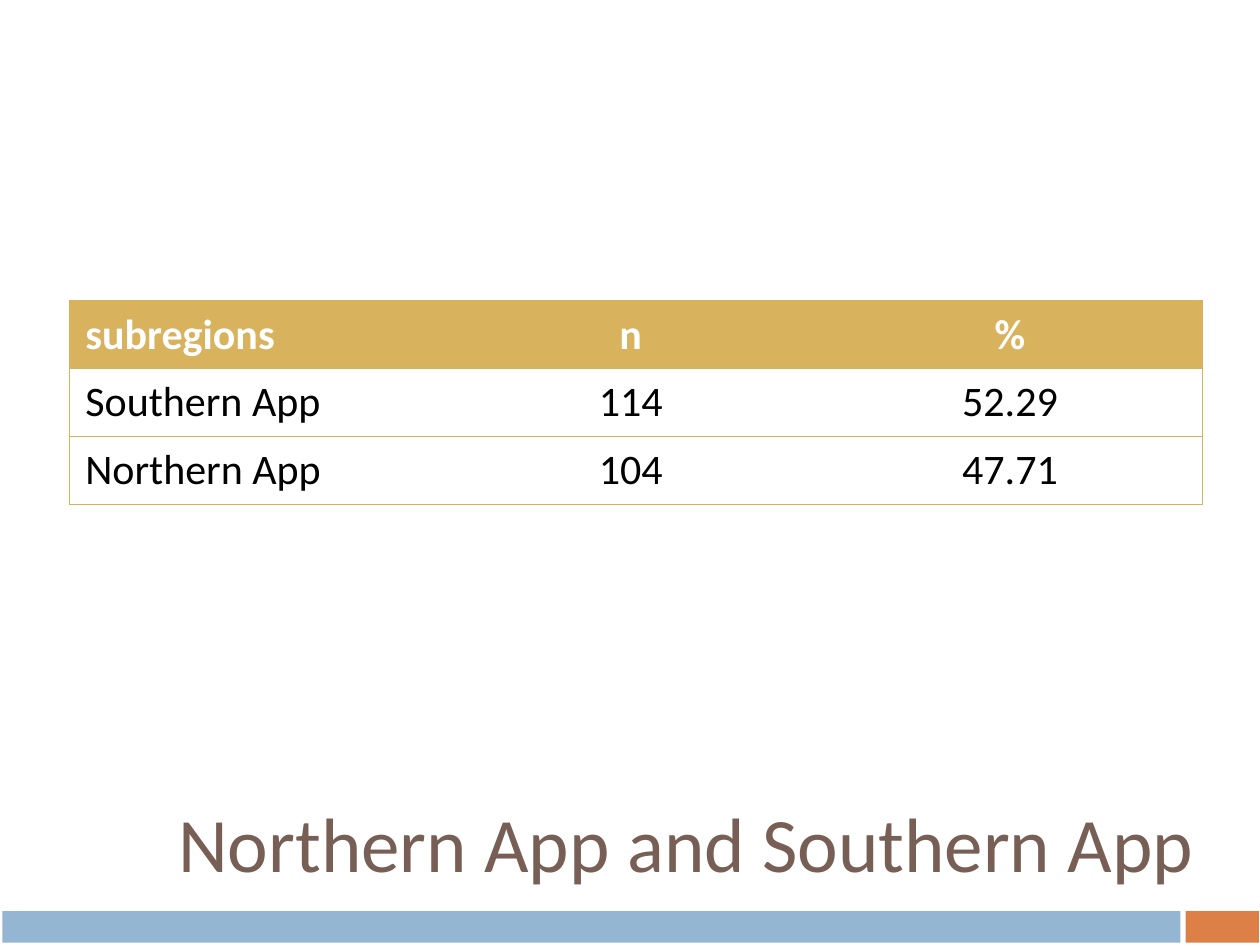
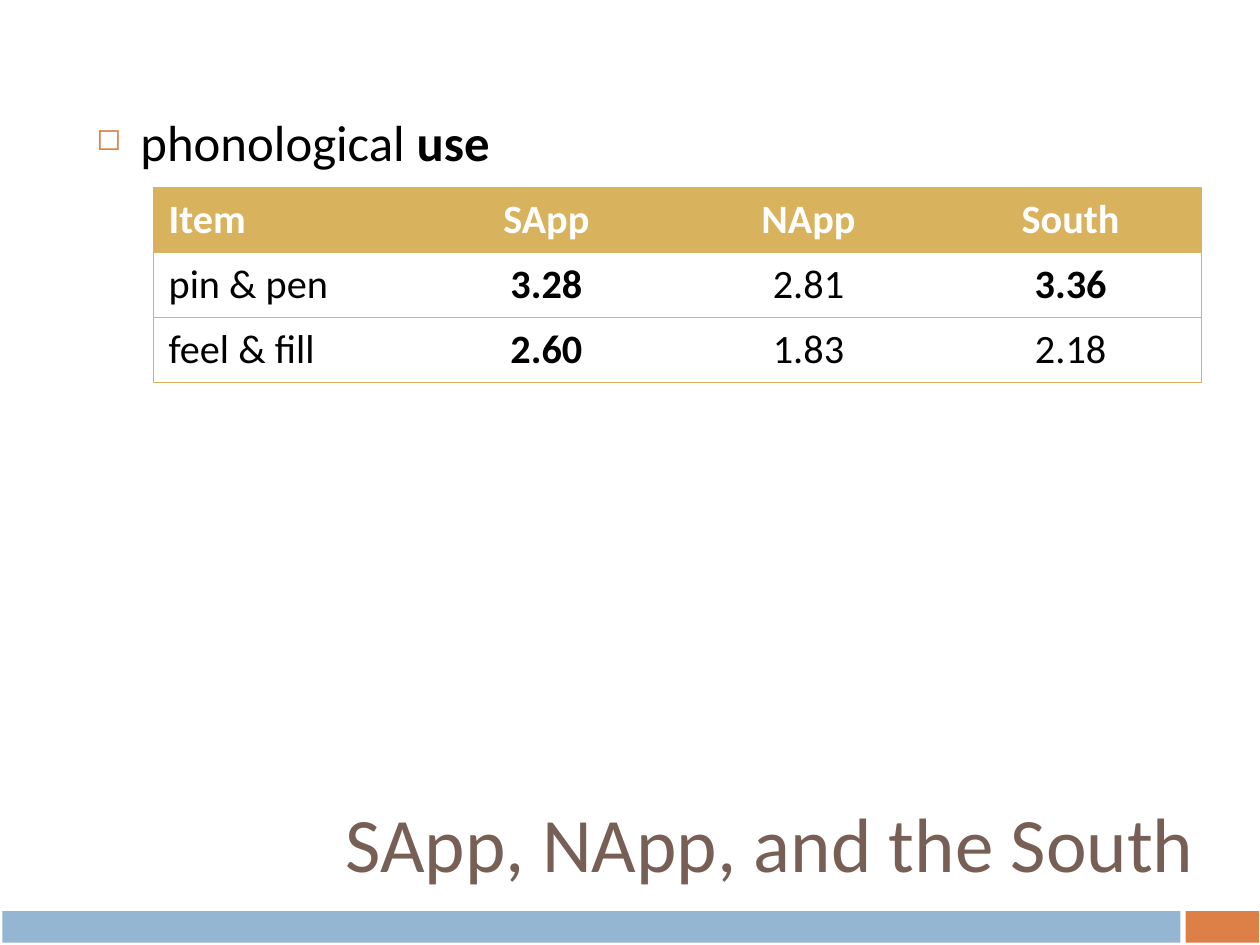
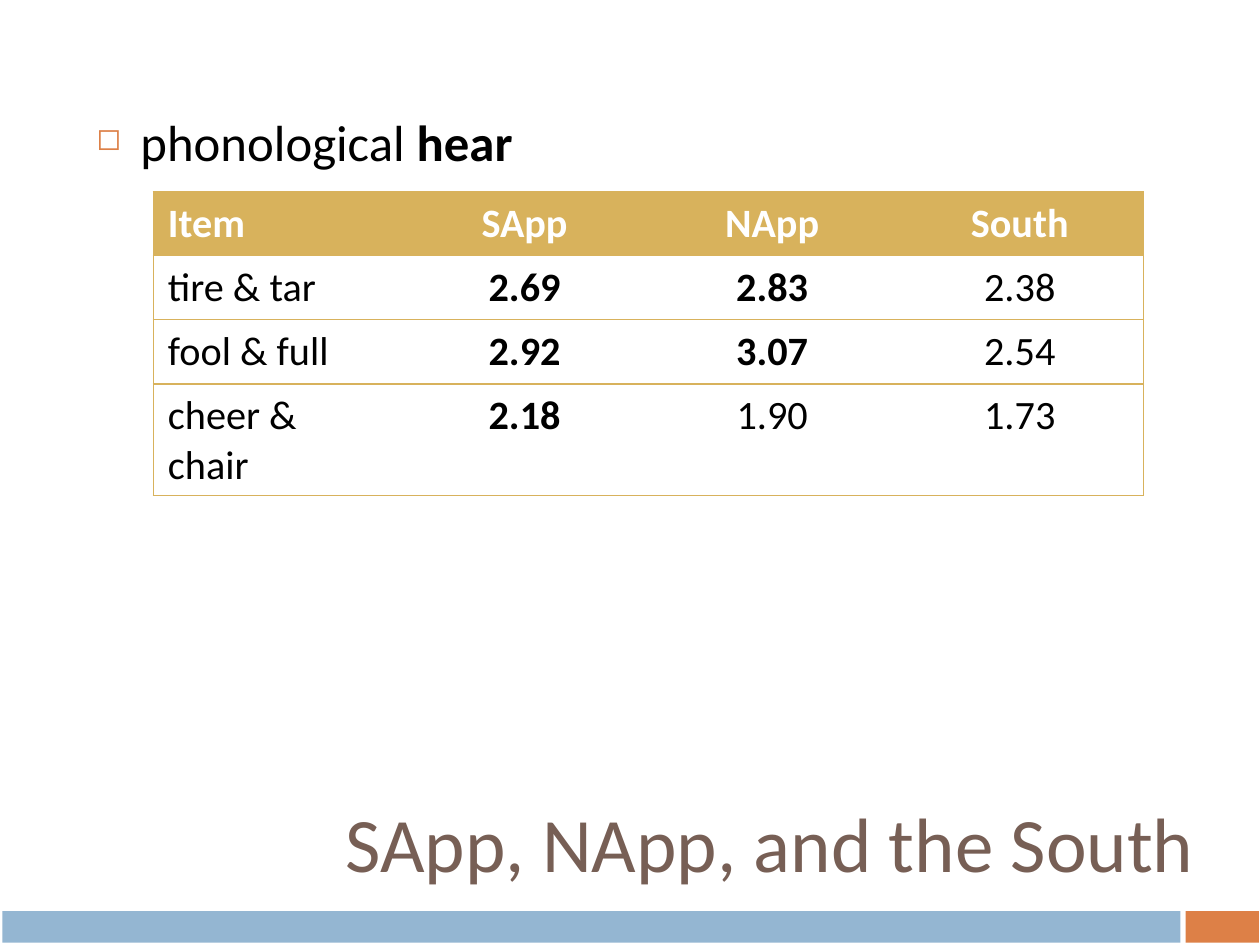
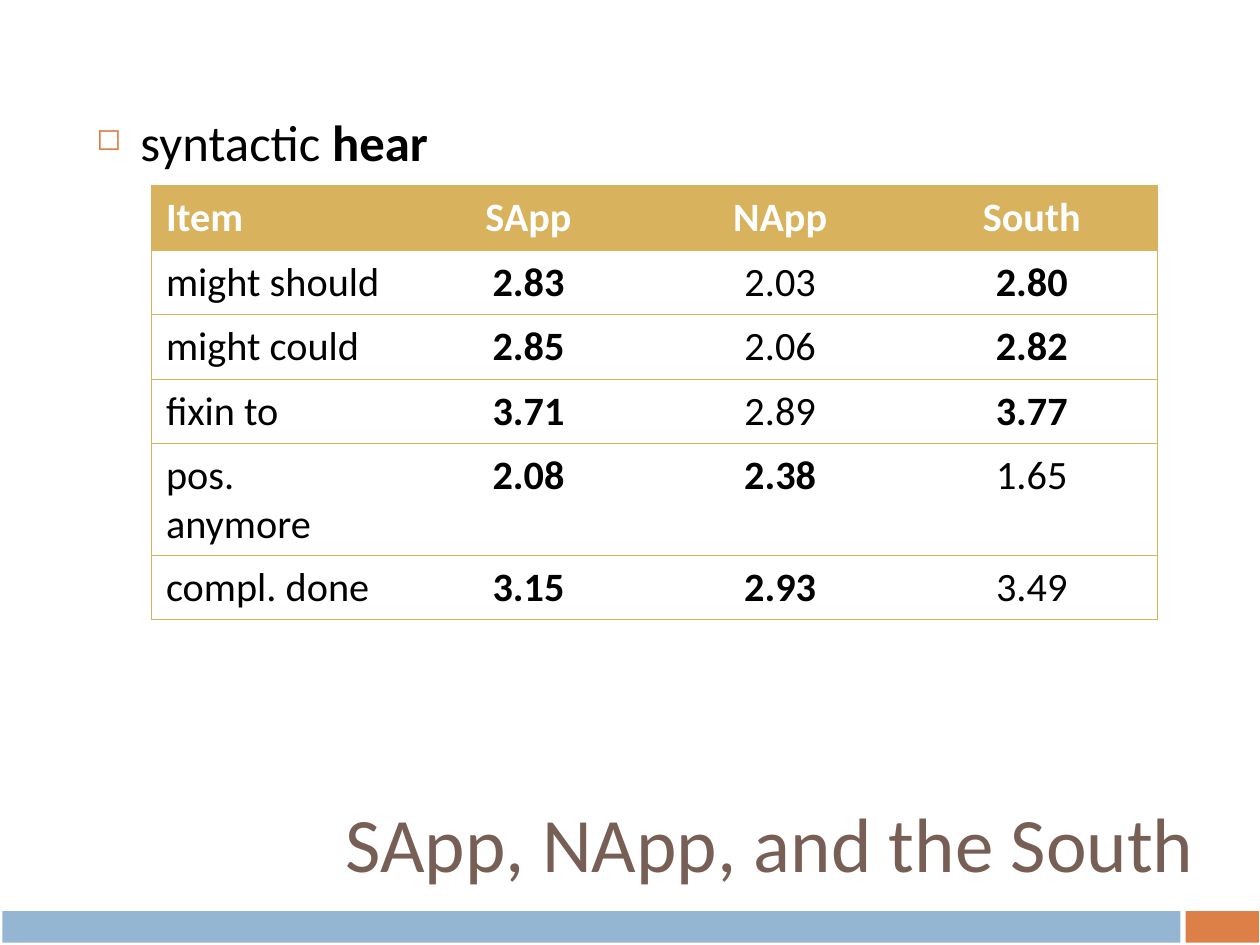
from lxml.etree import SubElement
from pptx import Presentation
from pptx.dml.color import RGBColor
from pptx.enum.shapes import MSO_SHAPE
from pptx.enum.text import MSO_ANCHOR, MSO_AUTO_SIZE, PP_ALIGN
from pptx.oxml.ns import qn
from pptx.util import Pt

COLORS = {
    "title": "775F55",
    "text": "000000",
    "header_text": "FFFFFF",
    "gold": "D8B25C",
    "blue": "94B6D2",
    "orange": "DD8047",
}
FONT = "Calibri"
PLAIN_TABLE_STYLE = "{2D5ABB26-0587-4C30-8999-92F81FD0307C}"
BANDS = [("orange", 677.5, 41.8), ("blue", 1.4, 673.2)]
BAND_TOP, BAND_HEIGHT = 520.6, 18
TITLE_FRAME = (48, 442, 642, 78)
BODY_FRAME = (48, 60, 642, 354)
BORDER_WIDTH = 0.79
REGION_HEADER = ("Item", "SApp", "NApp", "South")
COMPARISON_TITLE = "SApp, NApp, and the South"

SUBREGIONS = {
    "left": 39.6, "top": 172, "widths": (213.9, 213.9, 219.6),
    "row_height": 38.7, "size": 24, "insets": (9.2, 4.7),
    "rows": [
        ("subregions", "n", "%"),
        ("Southern App", "114", "52.29"),
        ("Northern App", "104", "47.71"),
    ],
}

# A trailing asterisk marks a value set in bold.
COMPARISONS = [
    ("phonological ", "use", {
        "left": 87.6, "top": 107.3, "widths": (149.8,) * 4,
        "row_height": 37.1, "size": 23, "insets": (8.8, 4.4),
        "rows": [
            REGION_HEADER,
            ("pin & pen", "3.28*", "2.81", "3.36*"),
            ("feel & fill", "2.60*", "1.83", "2.18"),
        ],
    }),
    ("phonological ", "hear", {
        "left": 87.6, "top": 109.6, "widths": (141.5,) * 4,
        "row_height": 36.6, "size": 23, "insets": (8.4, 4.2),
        "rows": [
            REGION_HEADER,
            ("tire & tar", "2.69*", "2.83*", "2.38"),
            ("fool & full", "2.92*", "3.07*", "2.54"),
            ("cheer & chair", "2.18*", "1.90", "1.73"),
        ],
    }),
    ("syntactic ", "hear", {
        "left": 86.4, "top": 106.3, "widths": (143.8,) * 4,
        "row_height": 36.8, "size": 23, "insets": (8.5, 4.3),
        "rows": [
            REGION_HEADER,
            ("might should", "2.83*", "2.03", "2.80*"),
            ("might could", "2.85*", "2.06", "2.82*"),
            ("fixin to", "3.71*", "2.89", "3.77*"),
            ("pos. anymore", "2.08*", "2.38*", "1.65"),
            ("compl. done", "3.15*", "2.93*", "3.49"),
        ],
    }),
]


def set_values(target, values):
    """Set each named attribute of the target."""
    for name, value in values.items():
        setattr(target, name, value)


def add_span(paragraph, text, size, color, bold=False):
    """Add one formatted run to a paragraph."""
    span = paragraph.add_run()
    span.text = text
    set_values(span.font, {"name": FONT, "size": Pt(size), "bold": bold})
    span.font.color.rgb = RGBColor.from_string(COLORS[color])


def add_bands(page):
    """Draw the two coloured bands at the foot of the page."""
    for color, left, width in BANDS:
        band = page.shapes.add_shape(
            MSO_SHAPE.RECTANGLE, Pt(left), Pt(BAND_TOP), Pt(width), Pt(BAND_HEIGHT))
        band.shadow.inherit = False
        band.fill.solid()
        band.fill.fore_color.rgb = RGBColor.from_string(COLORS[color])
        band.line.fill.background()


def add_page(deck, title):
    """Add a page with its bands and its title near the foot."""
    page = deck.slides.add_slide(deck.slide_layouts[5])
    add_bands(page)
    box = page.shapes.title
    set_values(box, dict(zip(("left", "top", "width", "height"), map(Pt, TITLE_FRAME))))
    set_values(box.text_frame, {
        "word_wrap": True,
        "auto_size": MSO_AUTO_SIZE.NONE,
        "vertical_anchor": MSO_ANCHOR.MIDDLE,
    })
    paragraph = box.text_frame.paragraphs[0]
    paragraph.alignment = PP_ALIGN.RIGHT
    add_span(paragraph, title, 44, "title")
    return page


def add_bullet(page, lead, strong):
    """Add a line with a square bullet and a bold last word."""
    box = page.shapes.add_textbox(*map(Pt, BODY_FRAME))
    box.text_frame.word_wrap = True
    paragraph = box.text_frame.paragraphs[0]
    paragraph.space_before = Pt(7)
    add_span(paragraph, lead, 29, "text")
    add_span(paragraph, strong, 29, "text", True)
    properties = paragraph._p.get_or_add_pPr()
    properties.set("marL", str(Pt(25.2)))
    properties.set("indent", str(-Pt(25.2)))
    color = SubElement(properties, qn("a:buClr"))
    SubElement(color, qn("a:srgbClr"), val=COLORS["orange"])
    SubElement(properties, qn("a:buSzPct"), val="60000")
    SubElement(properties, qn("a:buChar"), char="◻")


def add_borders(cell, sides):
    """Draw gold lines on the given sides of a cell."""
    properties = cell._tc.get_or_add_tcPr()
    for side in sides:
        line = SubElement(properties, qn(f"a:ln{side}"), w=str(Pt(BORDER_WIDTH)))
        fill = SubElement(line, qn("a:solidFill"))
        SubElement(fill, qn("a:srgbClr"), val=COLORS["gold"])


def format_cell(cell, text, size, insets, is_header, is_first):
    """Write and fill one cell."""
    across, down = map(Pt, insets)
    set_values(cell, {
        "margin_left": across, "margin_right": across,
        "margin_top": down, "margin_bottom": down,
    })
    paragraph = cell.text_frame.paragraphs[0]
    paragraph.alignment = PP_ALIGN.LEFT if is_first else PP_ALIGN.CENTER
    color = "header_text" if is_header else "text"
    add_span(paragraph, text.rstrip("*"), size, color, is_header or text.endswith("*"))
    if is_header:
        cell.fill.solid()
        cell.fill.fore_color.rgb = RGBColor.from_string(COLORS["gold"])
    else:
        cell.fill.background()


def add_data_table(page, data):
    """Add a table with a gold header and gold horizontal rules."""
    rows, widths = data["rows"], data["widths"]
    frame = page.shapes.add_table(
        len(rows), len(widths), Pt(data["left"]), Pt(data["top"]),
        Pt(sum(widths)), Pt(data["row_height"] * len(rows)))
    table = frame.table
    table.horz_banding = False
    table._tbl.tblPr.find(qn("a:tableStyleId")).text = PLAIN_TABLE_STYLE
    for column, width in zip(table.columns, widths):
        column.width = Pt(width)
    for row_index, values in enumerate(rows):
        table.rows[row_index].height = Pt(data["row_height"])
        for column_index, text in enumerate(values):
            cell = table.cell(row_index, column_index)
            is_first = column_index == 0
            is_last = column_index == len(widths) - 1
            add_borders(cell, "L" * is_first + "R" * is_last + "TB")
            format_cell(cell, text, data["size"], data["insets"], row_index == 0, is_first)


def main():
    """Build and save the deck."""
    deck = Presentation()
    set_values(deck, {"slide_width": Pt(720), "slide_height": Pt(540)})
    add_data_table(add_page(deck, "Northern App and Southern App"), SUBREGIONS)
    for lead, strong, data in COMPARISONS:
        page = add_page(deck, COMPARISON_TITLE)
        add_bullet(page, lead, strong)
        add_data_table(page, data)
    deck.save("out.pptx")


if __name__ == "__main__":
    main()
